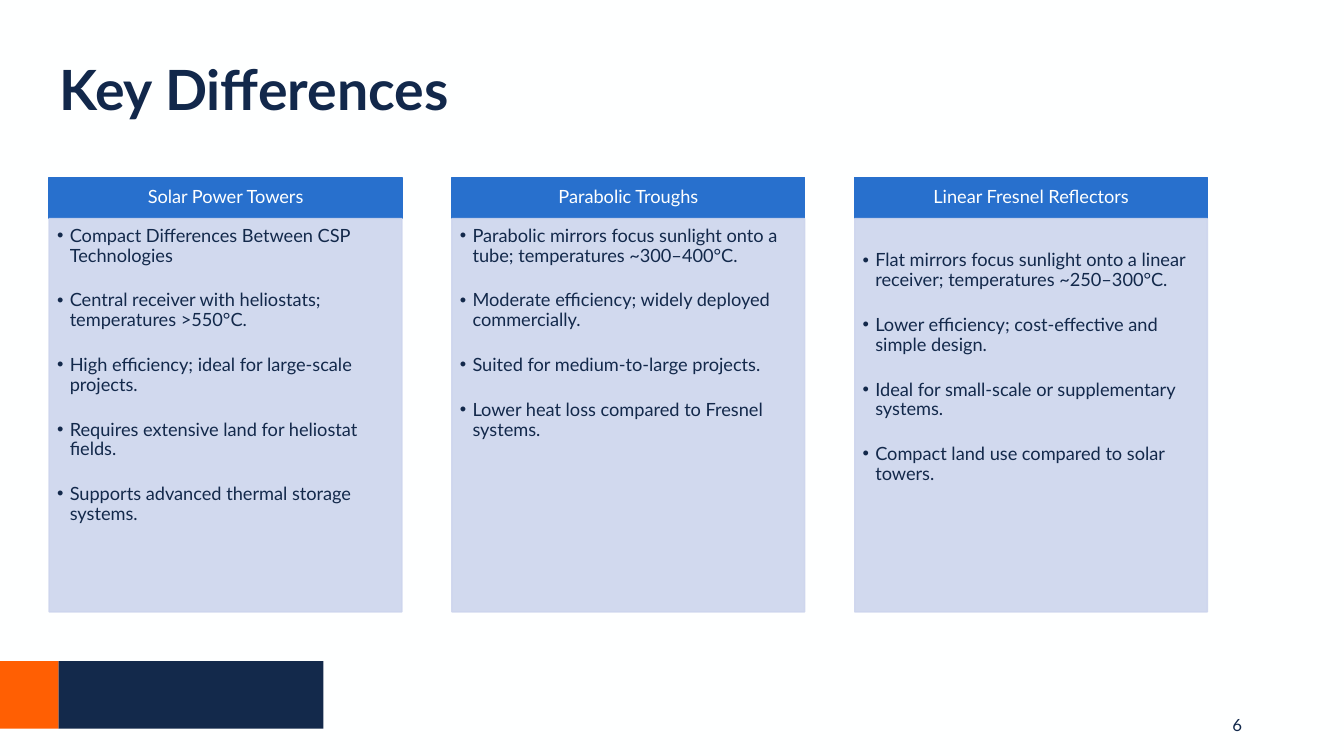
from dataclasses import dataclass

from lxml.etree import SubElement
from pptx import Presentation
from pptx.dml.color import RGBColor
from pptx.enum.shapes import MSO_SHAPE as Preset
from pptx.enum.text import MSO_ANCHOR as Anchor, PP_ALIGN as Align
from pptx.oxml.ns import qn
from pptx.shapes.autoshape import Shape
from pptx.slide import Slide
from pptx.text.text import TextFrame, _Paragraph as Paragraph
from pptx.util import Cm, Pt

FONT = "Lato"
NAVY, TITLE_NAVY, ORANGE = "13294B", "12284B", "FF5F03"
BLUE, PALE, WHITE = "2870CD", "CDD5ED", "FEFFFF"

COLUMN_LEFT, COLUMN_STEP, COLUMN_WIDTH = 1.24, 10.15, 8.89
HEADER_TOP, HEADER_HEIGHT, BODY_HEIGHT = 4.47, 1.04, 9.91
BULLET_INDENT = 0.32


@dataclass(frozen=True)
class Area:
    """A rectangle in centimetres."""
    left: float
    top: float
    width: float
    height: float

    def lengths(self) -> tuple[Cm, Cm, Cm, Cm]:
        return Cm(self.left), Cm(self.top), Cm(self.width), Cm(self.height)


@dataclass(frozen=True)
class Technology:
    name: str
    points: tuple[str, ...]
    top_inset: float = 0.2


TECHNOLOGIES = (
    Technology("Solar Power Towers", (
        "Compact Differences Between CSP Technologies",
        "Central receiver with heliostats; temperatures >550°C.",
        "High efficiency; ideal for large-scale projects.",
        "Requires extensive land for heliostat fields.",
        "Supports advanced thermal storage systems.",
    )),
    Technology("Parabolic Troughs", (
        "Parabolic mirrors focus sunlight onto a tube; temperatures ~300–400°C.",
        "Moderate efficiency; widely deployed commercially.",
        "Suited for medium-to-large projects.",
        "Lower heat loss compared to Fresnel systems.",
    )),
    Technology("Linear Fresnel Reflectors", (
        "Flat mirrors focus sunlight onto a linear receiver; temperatures ~250–300°C.",
        "Lower efficiency; cost-effective and simple design.",
        "Ideal for small-scale or supplementary systems.",
        "Compact land use compared to solar towers.",
    ), top_inset=0.82),
)


def color(value: str) -> RGBColor:
    return RGBColor.from_string(value)


def add_block(page: Slide, area: Area, fill: str, outlined: bool = False) -> Shape:
    block = page.shapes.add_shape(Preset.RECTANGLE, *area.lengths())
    block.shadow.inherit = False
    block.fill.solid()
    block.fill.fore_color.rgb = color(fill)
    if outlined:
        block.line.color.rgb = color(fill)
        block.line.width = Pt(1)
    else:
        block.line.fill.background()
    return block


def set_opacity(block: Shape, percent: int) -> None:
    """Apply one opacity to both the fill and the outline."""
    for tone in list(block._element.spPr.iter(qn("a:srgbClr"))):
        SubElement(tone, qn("a:alpha"), val=str(percent * 1000))


def set_frame(frame: TextFrame, anchor: Anchor, left: float = 0.25,
              top: float = 0.13, right: float = 0.25, bottom: float = 0.13) -> None:
    frame.word_wrap = True
    frame.vertical_anchor = anchor
    frame.margin_left, frame.margin_top = Cm(left), Cm(top)
    frame.margin_right, frame.margin_bottom = Cm(right), Cm(bottom)


def write(para: Paragraph, text: str, size: float, ink: str,
          align: Align = Align.LEFT, bold: bool = False) -> None:
    para.text = text
    para.alignment = align
    para.line_spacing = 0.9
    para.font.name = FONT
    para.font.size = Pt(size)
    para.font.bold = bold
    para.font.color.rgb = color(ink)


def add_label(page: Slide, area: Area, text: str, size: float,
              align: Align = Align.LEFT, bold: bool = False) -> None:
    frame = page.shapes.add_textbox(*area.lengths()).text_frame
    set_frame(frame, Anchor.MIDDLE)
    write(frame.paragraphs[0], text, size, TITLE_NAVY, align, bold)


def add_bullet(para: Paragraph) -> None:
    properties = para._p.get_or_add_pPr()
    properties.set("marL", str(Cm(BULLET_INDENT)))
    properties.set("indent", str(-Cm(BULLET_INDENT)))
    SubElement(properties, qn("a:buFont"), typeface="Arial")
    SubElement(properties, qn("a:buChar"), char="•")


def add_column(page: Slide, left: float, technology: Technology) -> None:
    header = add_block(page, Area(left, HEADER_TOP, COLUMN_WIDTH, HEADER_HEIGHT), BLUE, True)
    set_frame(header.text_frame, Anchor.MIDDLE)
    write(header.text_frame.paragraphs[0], technology.name, 13, WHITE, Align.CENTER)

    body_top = HEADER_TOP + HEADER_HEIGHT
    body = add_block(page, Area(left, body_top, COLUMN_WIDTH, BODY_HEIGHT), PALE, True)
    set_opacity(body, 90)
    frame = body.text_frame
    set_frame(frame, Anchor.TOP, 0.2, technology.top_inset, 0.25, 0.28)
    for index, point in enumerate(technology.points):
        para = frame.add_paragraph() if index else frame.paragraphs[0]
        add_bullet(para)
        write(para, point, 13, NAVY)
        para.space_after = Pt(18)


def main() -> None:
    deck = Presentation()
    deck.slide_width, deck.slide_height = Cm(33.87), Cm(19.05)
    page = deck.slides.add_slide(deck.slide_layouts[6])
    page.background.fill.solid()
    page.background.fill.fore_color.rgb = color(WHITE)

    add_block(page, Area(1.47, 16.66, 6.68, 1.7), NAVY)
    add_block(page, Area(0, 16.66, 1.47, 1.7), ORANGE)
    add_label(page, Area(23.93, 17.78, 7.62, 1.02), "6", 12, Align.RIGHT)
    for index, technology in enumerate(TECHNOLOGIES):
        add_column(page, COLUMN_LEFT + index * COLUMN_STEP, technology)
    add_label(page, Area(1.24, 1.5, 29.21, 1.68), "Key Differences", 39.6, bold=True)

    deck.save("out.pptx")


if __name__ == "__main__":
    main()
